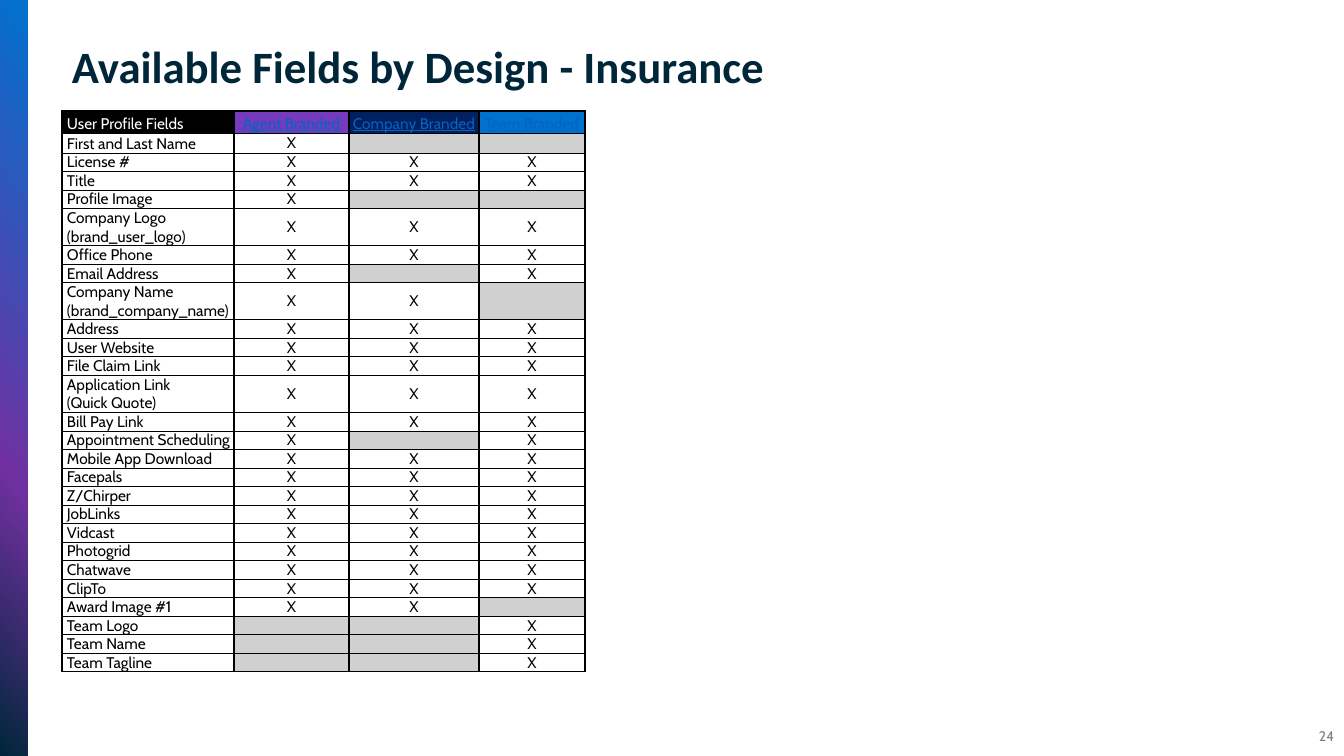
from copy import deepcopy
from dataclasses import dataclass

from lxml import etree
from pptx import Presentation
from pptx import util as u
from pptx.dml.color import RGBColor
from pptx.enum import shapes, text
from pptx.oxml.ns import qn

PX = 914400 / 100.8
LEFT, CENTER, RIGHT = text.PP_ALIGN.LEFT, text.PP_ALIGN.CENTER, text.PP_ALIGN.RIGHT
MIDDLE, BOTTOM = text.MSO_ANCHOR.MIDDLE, text.MSO_ANCHOR.BOTTOM


@dataclass(frozen=True)
class Theme:
    ink: str = "000000"
    white: str = "FFFFFF"
    navy: str = "00263A"
    link: str = "0563C1"
    grey: str = "808080"
    unavailable: str = "D0D0D0"
    band: tuple = ((0, "0072CE"), (63, "7030A0"), (100, "00263A"))
    heads: tuple = ("000000", "753BBD", "002060", "0072CE")
    title_font: str = "Calibri"
    body_font: str = "Cabin"
    title_size: int = 32
    body_size: int = 11
    number_size: int = 10


T = Theme()

HEADS = ["User Profile Fields", "Agent Branded", "Company Branded", "Team Branded"]
COLUMNS = [172, 115, 130, 106]
# One mark per design: X available, - not available
FIELDS = [
    ("First and Last Name", "X--"),
    ("License #", "XXX"),
    ("Title", "XXX"),
    ("Profile Image", "X--"),
    ("Company Logo\n(brand_user_logo)", "XXX"),
    ("Office Phone", "XXX"),
    ("Email Address", "X-X"),
    ("Company Name\n(brand_company_name)", "XX-"),
    ("Address", "XXX"),
    ("User Website", "XXX"),
    ("File Claim Link", "XXX"),
    ("Application Link\n(Quick Quote)", "XXX"),
    ("Bill Pay Link", "XXX"),
    ("Appointment Scheduling", "X-X"),
    ("Mobile App Download", "XXX"),
    ("Facepals", "XXX"),
    ("Z/Chirper", "XXX"),
    ("JobLinks", "XXX"),
    ("Vidcast", "XXX"),
    ("Photogrid", "XXX"),
    ("Chatwave", "XXX"),
    ("ClipTo", "XXX"),
    ("Award Image #1", "XX-"),
    ("Team Logo", "--X"),
    ("Team Name", "--X"),
    ("Team Tagline", "--X"),
]


def px(n):
    return u.Emu(round(n * PX))


def rgb(value):
    return RGBColor.from_string(value)


def write(p, words, color, align=LEFT, **font):
    """Fill a paragraph; line breaks take the format of its text."""
    p.text = words.replace("\n", "\v")
    p.alignment = align
    for r in p.runs:
        for name, value in font.items():
            setattr(r.font, name, value)
        r.font.color.rgb = rgb(color)
    for br in p._p.findall(qn("a:br")):
        br.append(deepcopy(p.runs[0]._r.rPr))


def add_text(s, box, words, color, align=LEFT, **font):
    tf = s.shapes.add_textbox(*map(px, box)).text_frame
    tf.word_wrap = True
    tf.vertical_anchor = MIDDLE
    write(tf.paragraphs[0], words, color, align, **font)
    return tf


def add_band(s, box):
    sp = s.shapes.add_shape(shapes.MSO_SHAPE.RECTANGLE, *map(px, box))
    sp.shadow.inherit = False
    sp.line.fill.background()
    sp.fill.gradient()
    grad = sp._element.spPr.find(qn("a:gradFill"))
    stops = grad.find(qn("a:gsLst"))
    for old in list(stops):
        stops.remove(old)
    for position, color in T.band:
        stop = etree.SubElement(stops, qn("a:gs"), pos=str(position * 1000))
        etree.SubElement(stop, qn("a:srgbClr"), val=color)
    lin = grad.find(qn("a:lin"))
    lin.set("ang", str(140 * 60000))
    lin.set("scaled", "0")


def set_borders(cell, first, last):
    """Thick sides everywhere, thick edges above the first and below the last row."""
    widths = {"L": 1, "R": 1, "T": 1 if first else 0.5, "B": 1 if last else 0.5}
    tc_pr = cell._tc.get_or_add_tcPr()
    for i, (side, width) in enumerate(widths.items()):
        ln = etree.Element(qn(f"a:ln{side}"), w=str(u.Pt(width)))
        fill = etree.SubElement(ln, qn("a:solidFill"))
        etree.SubElement(fill, qn("a:srgbClr"), val=T.ink)
        tc_pr.insert(i, ln)


def fill_cell(cell, words, fill, color, is_field, underline):
    cell.margin_left = px(5 if is_field else 0)
    cell.margin_right = cell.margin_top = cell.margin_bottom = 0
    if fill:
        cell.fill.solid()
        cell.fill.fore_color.rgb = rgb(fill)
    else:
        cell.fill.background()
    p = cell.text_frame.paragraphs[0]
    if words:
        write(p, words, color, LEFT if is_field else CENTER, name=T.body_font,
              size=u.Pt(T.body_size), underline=underline)
    else:
        etree.SubElement(p._p, qn("a:endParaRPr"), sz=str(T.body_size * 100))


def add_fields_table(s, left, top):
    rows = [HEADS] + [[field, *marks] for field, marks in FIELDS]
    heights = [22, 20] + [37 if "\n" in field else 18 for field, _ in FIELDS[1:]]
    tbl = s.shapes.add_table(len(rows), len(COLUMNS), px(left), px(top),
                             px(sum(COLUMNS)), px(sum(heights))).table
    tbl.first_row = tbl.horz_banding = False
    for col, width in zip(tbl.columns, COLUMNS):
        col.width = px(width)
    for i, (row, height) in enumerate(zip(rows, heights)):
        tbl.rows[i].height = px(height)
        for j, words in enumerate(row):
            cell = tbl.cell(i, j)
            head, is_field = i == 0, j == 0
            cell.vertical_anchor = BOTTOM if head or is_field else MIDDLE
            if head:
                fill, color = T.heads[j], T.white if is_field else T.link
            else:
                fill, color = T.unavailable if words == "-" else None, T.ink
            fill_cell(cell, "" if words == "-" else words, fill, color,
                      is_field, head and not is_field)
            set_borders(cell, head, i == len(rows) - 1)


def build_slide(s, width, height):
    add_text(s, (width - 63, height - 40, 63, 40), "24", T.grey, RIGHT,
             name=T.body_font, size=u.Pt(T.number_size))
    add_band(s, (0, 0, 28, height))
    tf = add_text(s, (62, 27, 1098, 84), "Available Fields by Design - Insurance",
                  T.navy, name=T.title_font, size=u.Pt(T.title_size), bold=True)
    tf.paragraphs[0].line_spacing = 0.9
    add_fields_table(s, 62, 111)


def main():
    prs = Presentation()
    width, height = 1344, 756
    prs.slide_width, prs.slide_height = px(width), px(height)
    build_slide(prs.slides.add_slide(prs.slide_layouts[6]), width, height)
    prs.save("out.pptx")


if __name__ == "__main__":
    main()
